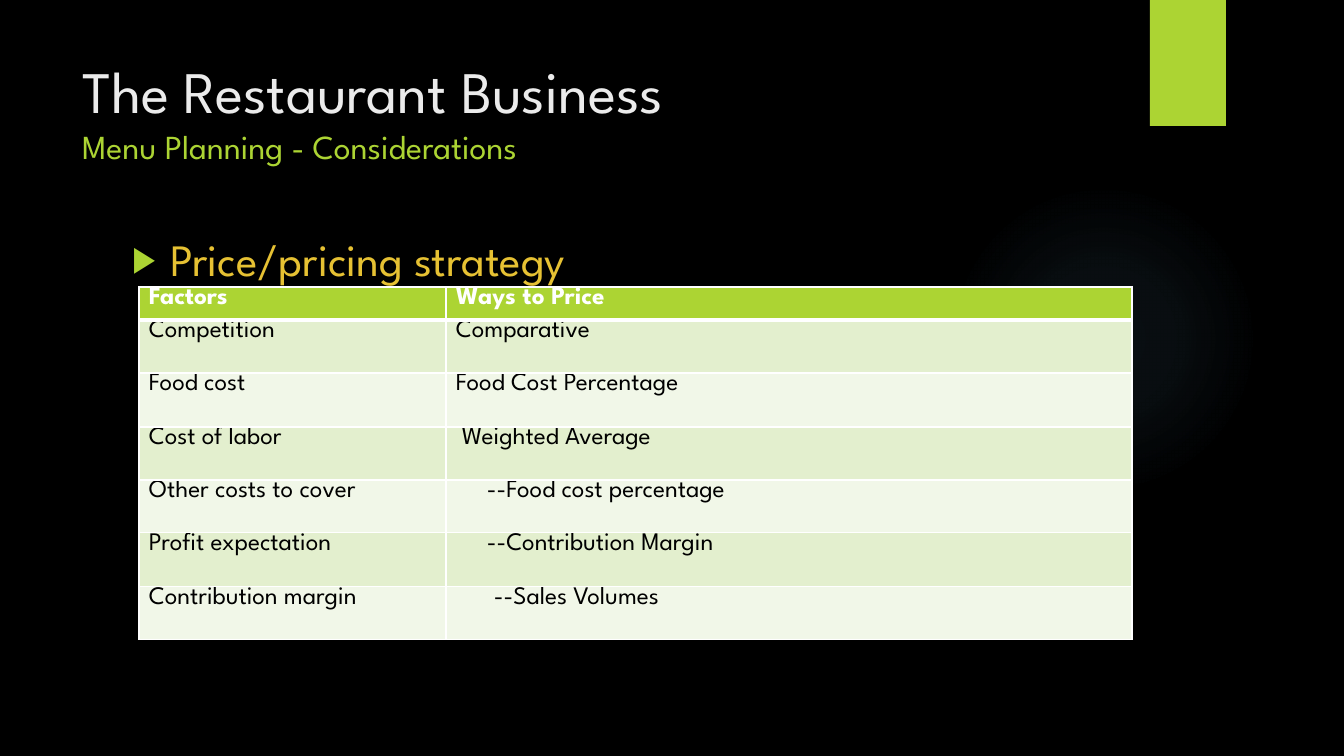
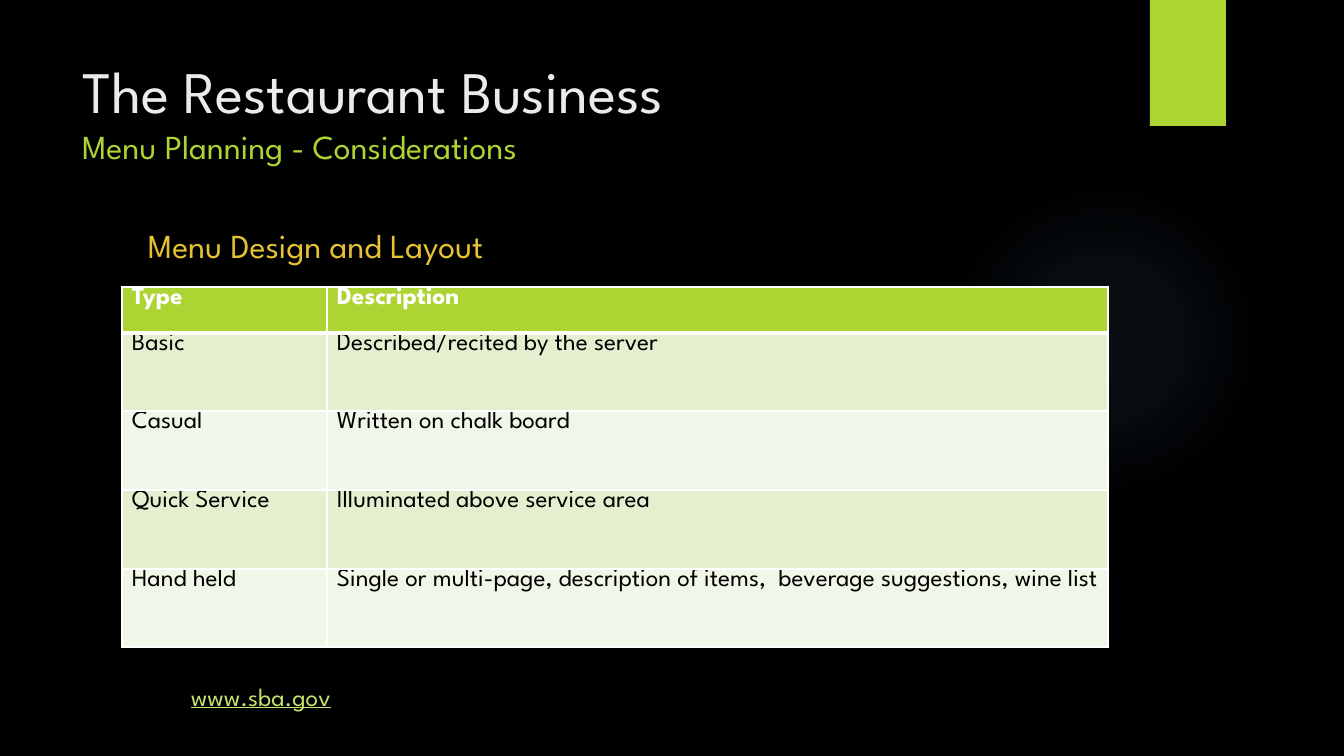
from lxml.etree import SubElement
from pptx import Presentation
from pptx.dml.color import RGBColor
from pptx.enum.shapes import MSO_SHAPE
from pptx.enum.text import MSO_ANCHOR, PP_ALIGN
from pptx.oxml import parse_xml
from pptx.oxml.ns import nsdecls, qn
from pptx.util import Pt

PX = 914400 / 100.8
FONT = "League Spartan"
BLACK, WHITE, PALE = "000000", "FFFFFF", "EBEBEB"
LIME, GOLD, LINK, GLOW = "ACD433", "E6C133", "C4E46E", "7AC4F0"
BANDS = ["E3EFCE", "F1F7E8"]

TABLE_TOP = 287
SLIDES = [
    {
        "heading": "Price/pricing strategy",
        "bulleted": True,
        "left": 139, "columns": [307, 686], "header": 33, "body": 320,
        "rows": [
            ("Factors", "Ways to Price"),
            ("Competition", "Comparative"),
            ("Food cost", "Food Cost Percentage"),
            ("Cost of labor", "Weighted Average"),
            ("Other costs to cover", "--Food cost percentage"),
            ("Profit expectation", "--Contribution Margin"),
            ("Contribution margin", "--Sales Volumes"),
        ],
        # Extra left indent of second-column entries, by row
        "indents": {3: 6, 4: 31, 5: 31, 6: 38},
    },
    {
        "heading": "Menu Design and Layout",
        "bulleted": False,
        "left": 122, "columns": [205, 781], "header": 46, "body": 314,
        "rows": [
            ("Type", "Description"),
            ("Basic", "Described/recited by the server"),
            ("Casual", "Written on chalk board"),
            ("Quick Service", "Illuminated above service area"),
            ("Hand held", "Single or multi-page, description of items,  "
                          "beverage suggestions, wine list"),
        ],
        "indents": {},
        "link": "www.sba.gov",
    },
]


def px(*lengths):
    return [round(length * PX) for length in lengths]


def add_run(paragraph, text, size, colour, bold=False, underline=False):
    run = paragraph.add_run()
    run.text = text
    run.font.name = FONT
    run.font.size = Pt(size)
    run.font.bold = bold
    run.font.underline = underline
    run.font.color.rgb = RGBColor.from_string(colour)


deck = Presentation()
deck.slide_width, deck.slide_height = px(1344, 756)

# Shared background and title place
master = deck.slide_master
master.background.fill.solid()
master.background.fill.fore_color.rgb = RGBColor.from_string(BLACK)
master_title = master.placeholders[0]
(master_title.left, master_title.top,
 master_title.width, master_title.height) = px(72, 50, 1037, 154)

for number, content in enumerate(SLIDES):
    layout = deck.slide_layouts[1 if content["bulleted"] else 5]
    slide = deck.slides.add_slide(layout)

    # Glow and lime tab, drawn once and moved to the master
    if number == 0:
        glow = slide.shapes.add_shape(MSO_SHAPE.OVAL, *px(949, 184, 310, 310))
        tab = slide.shapes.add_shape(MSO_SHAPE.RECTANGLE, *px(1150, 0, 76, 126))
        tab.fill.solid()
        tab.fill.fore_color.rgb = RGBColor.from_string(LIME)
        stops = "".join(
            f'<a:gs pos="{place * 1000}"><a:srgbClr val="{GLOW}">'
            f'<a:alpha val="{alpha * 1000}"/></a:srgbClr></a:gs>'
            for place, alpha in [(0, 7), (36, 6), (69, 0), (100, 0)])
        glow.element.spPr.find(qn("a:prstGeom")).addnext(parse_xml(
            f'<a:gradFill {nsdecls("a")}><a:gsLst>{stops}</a:gsLst>'
            '<a:path path="circle"><a:fillToRect l="50000" t="50000" '
            'r="50000" b="50000"/></a:path></a:gradFill>'))
        for position, decoration in enumerate([glow, tab], start=2):
            decoration.line.fill.background()
            decoration.shadow.inherit = False
            master.element.cSld.spTree.insert(position, decoration.element)

    # Title with subtitle on its second line
    title = slide.shapes.title.text_frame
    title.vertical_anchor = MSO_ANCHOR.TOP
    title_line = title.paragraphs[0]
    title_line.alignment = PP_ALIGN.LEFT
    add_run(title_line, "The Restaurant Business", 42, PALE)
    title_line.add_line_break()
    add_run(title_line, "Menu Planning - Considerations", 24, LIME)

    # Heading above the table
    if content["bulleted"]:
        body = slide.placeholders[1]
        body.left, body.top, body.width, body.height = px(122, 227, 986, 463)
        heading = body.text_frame.paragraphs[0]
        properties = heading._p.get_or_add_pPr()
        indent = px(38)[0]
        properties.set("marL", str(indent))
        properties.set("indent", str(-indent))
        bullet_colour = SubElement(properties, qn("a:buClr"))
        SubElement(bullet_colour, qn("a:srgbClr"), val=LIME)
        SubElement(properties, qn("a:buSzPct"), val="80000")
        SubElement(properties, qn("a:buFont"), typeface="Arial")
        SubElement(properties, qn("a:buChar"), char="▶")
        heading.space_before = Pt(0)
        add_run(heading, content["heading"], 32, GOLD)
    else:
        heading_box = slide.shapes.add_textbox(*px(138, 220, 432, 50))
        heading_box.text_frame.word_wrap = True
        add_run(heading_box.text_frame.paragraphs[0], content["heading"], 24, GOLD)

    # Table
    rows, columns = content["rows"], content["columns"]
    count = len(rows) - 1
    header, body_height = content["header"], content["body"]
    table = slide.shapes.add_table(
        len(rows), len(columns),
        *px(content["left"], TABLE_TOP, sum(columns), header + body_height)).table
    for column, width in zip(table.columns, px(*columns)):
        column.width = width
    edges = [round(body_height * i / count) for i in range(count + 1)]
    heights = [header] + [low - high for high, low in zip(edges, edges[1:])]
    for r, entries in enumerate(rows):
        table.rows[r].height = px(heights[r])[0]
        for c, entry in enumerate(entries):
            cell = table.cell(r, c)
            extra = content["indents"].get(r, 0) if c == 1 else 0
            cell.margin_left, cell.margin_right = px(10 + extra, 5)
            cell.margin_top = cell.margin_bottom = 0
            cell_properties = cell._tc.get_or_add_tcPr()
            for side in ("L", "R", "T", "B"):
                thick = (r, side) in [(0, "B"), (1, "T")]
                border = SubElement(cell_properties, qn(f"a:ln{side}"),
                                    w=str(Pt(3 if thick else 1)))
                line_fill = SubElement(border, qn("a:solidFill"))
                SubElement(line_fill, qn("a:srgbClr"), val=WHITE)
            cell.fill.solid()
            cell.fill.fore_color.rgb = RGBColor.from_string(
                BANDS[(r - 1) % 2] if r else LIME)
            add_run(cell.text_frame.paragraphs[0], entry, 18,
                    BLACK if r else WHITE, bold=r == 0)

    # Web address below the table
    if "link" in content:
        link_box = slide.shapes.add_textbox(*px(181, 676, 219, 40))
        link_box.text_frame.word_wrap = True
        add_run(link_box.text_frame.paragraphs[0], content["link"], 18, LINK,
                underline=True)

deck.save("out.pptx")
